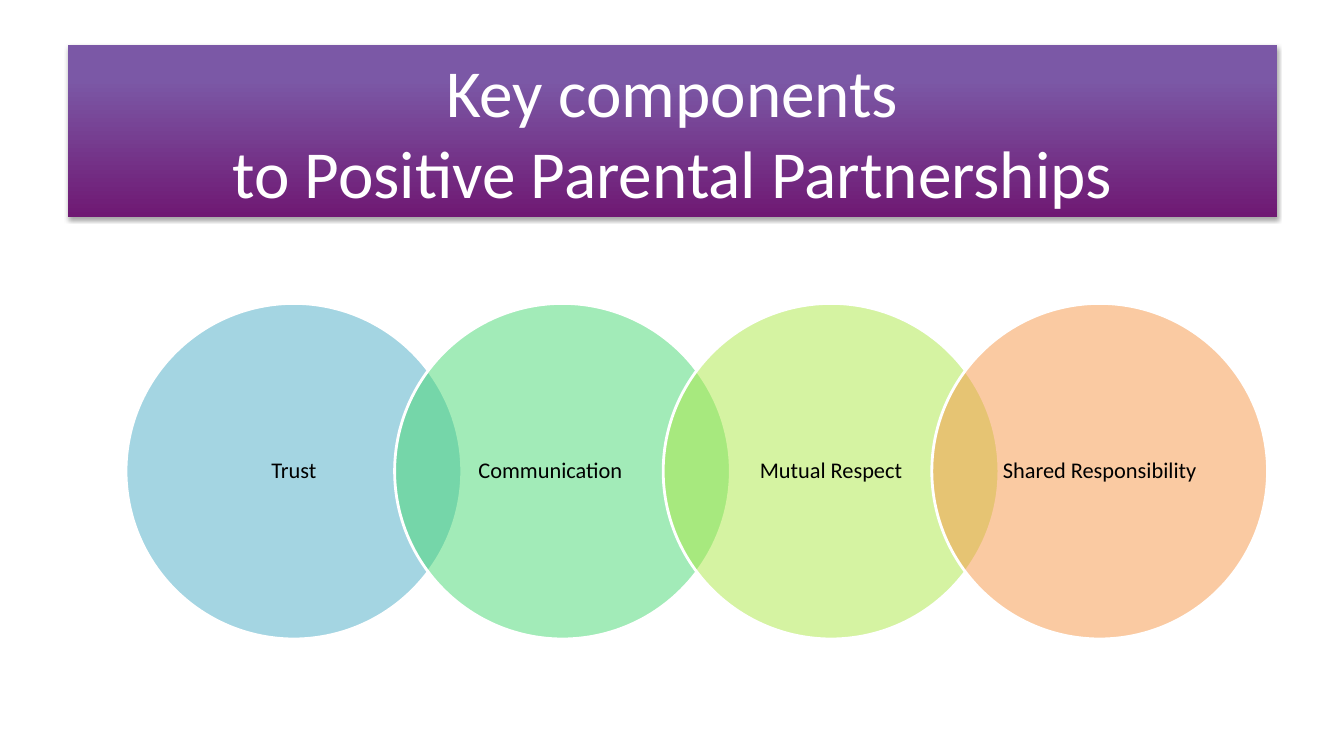
"""Build a slide with a gradient title banner above four overlapping circles."""
import pptx
import pptx.dml.color
import pptx.enum.shapes
import pptx.enum.text
import pptx.oxml
import pptx.oxml.ns
import pptx.util
from lxml import etree

TITLE = ["Key components", "to Positive Parental Partnerships"]
COMPONENTS = [
    {"label": "Trust", "color": "4BACC6", "right_inset": 0.18},
    {"label": "Communication", "color": "47D872", "right_inset": 0.42},
    {"label": "Mutual Respect", "color": "ACE946", "right_inset": 0.18},
    {"label": "Shared Responsibility", "color": "F79646", "right_inset": 0.18},
]
THEME = {
    "font": "Calibri",
    "title_size": 48,
    "label_size": 16,
    "title_color": "FFFFFF",
    "label_color": "000000",
    "outline": "FFFFFF",
    "circle_alpha": 50,
    "banner_stops": [(0, "6F1973"), (80, "7B58A6"), (100, "7C57A8")],
    "shadow": ("000000", 35),
}
BANNER = (0.67, 0.45, 12, 1.7)
CIRCLE_LEFT, CIRCLE_TOP, DIAMETER = 1.25, 3.01, 3.33
STEP = DIAMETER * 0.8

Inches = pptx.util.Inches
Pt = pptx.util.Pt
SHAPE = pptx.enum.shapes.MSO_SHAPE
qn = pptx.oxml.ns.qn
NS = pptx.oxml.ns.nsdecls("a")


def rgb(value):
    return pptx.dml.color.RGBColor.from_string(value)


def add_box(slide, kind, box, lines, size, color):
    sp = slide.shapes.add_shape(kind, *[Inches(v) for v in box])
    sp.shadow.inherit = False
    tf = sp.text_frame
    tf.word_wrap = True
    tf.vertical_anchor = pptx.enum.text.MSO_ANCHOR.MIDDLE
    p = tf.paragraphs[0]
    p.alignment = pptx.enum.text.PP_ALIGN.CENTER
    for number, line in enumerate(lines):
        if number:
            p.add_line_break()
        r = p.add_run()
        r.text = line
        r.font.name = THEME["font"]
        r.font.size = Pt(size)
        r.font.color.rgb = rgb(color)
    return sp


def add_banner(slide):
    sp = add_box(slide, SHAPE.RECTANGLE, BANNER, TITLE,
                 THEME["title_size"], THEME["title_color"])
    sp.line.fill.background()
    stops = "".join(
        f'<a:gs pos="{pos * 1000}"><a:srgbClr val="{color}"/></a:gs>'
        for pos, color in THEME["banner_stops"])
    gradient = pptx.oxml.parse_xml(
        f'<a:gradFill {NS} rotWithShape="1"><a:gsLst>{stops}</a:gsLst>'
        '<a:lin ang="16200000" scaled="0"/></a:gradFill>')
    props = sp.fill._xPr
    props.find(qn("a:prstGeom")).addnext(gradient)
    color, alpha = THEME["shadow"]
    props.find(qn("a:effectLst")).append(pptx.oxml.parse_xml(
        f'<a:outerShdw {NS} blurRad="{Pt(3.1)}" dist="{Pt(1.8)}" dir="5400000" '
        f'rotWithShape="0"><a:srgbClr val="{color}">'
        f'<a:alpha val="{alpha * 1000}"/></a:srgbClr></a:outerShdw>'))


def add_circle(slide, index, component):
    box = (CIRCLE_LEFT + index * STEP, CIRCLE_TOP, DIAMETER, DIAMETER)
    sp = add_box(slide, SHAPE.OVAL, box, [component["label"]],
                 THEME["label_size"], THEME["label_color"])
    sp.fill.solid()
    sp.fill.fore_color.rgb = rgb(component["color"])
    fill_color = sp.fill._xPr.find(qn("a:solidFill"))[0]
    etree.SubElement(fill_color, qn("a:alpha"),
                     val=str(THEME["circle_alpha"] * 1000))
    sp.line.color.rgb = rgb(THEME["outline"])
    sp.line.width = Pt(2)
    tf = sp.text_frame
    tf.margin_left = Inches(0.18)
    tf.margin_right = Inches(component["right_inset"])
    tf.margin_top = tf.margin_bottom = Inches(0.02)
    tf.paragraphs[0].line_spacing = 0.9


def main():
    prs = pptx.Presentation()
    prs.slide_width, prs.slide_height = Inches(13.33), Inches(7.5)
    s = prs.slides.add_slide(prs.slide_layouts[6])
    add_banner(s)
    for index, component in enumerate(COMPONENTS):
        add_circle(s, index, component)
    prs.save("out.pptx")


if __name__ == "__main__":
    main()
